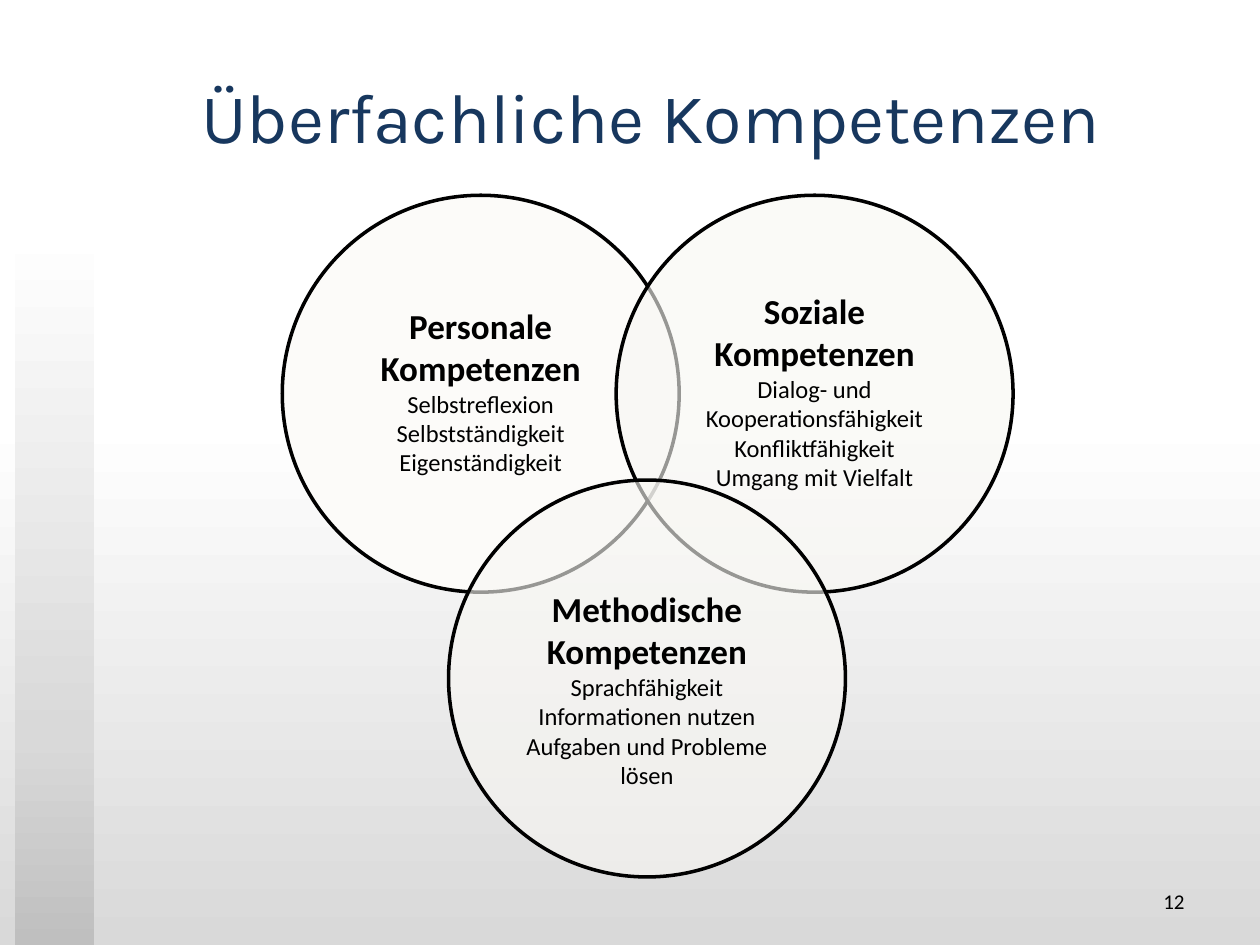
from dataclasses import dataclass

from lxml import etree
from pptx import Presentation
from pptx.dml.color import RGBColor
from pptx.enum.shapes import MSO_SHAPE
from pptx.enum.text import MSO_ANCHOR, PP_ALIGN
from pptx.oxml import parse_xml
from pptx.oxml.ns import nsdecls, qn
from pptx.slide import Slide
from pptx.text.text import TextFrame
from pptx.util import Inches, Pt


@dataclass(frozen=True)
class Theme:
    title_font: str = "Karla"
    body_font: str = "Calibri"
    title_size: int = 40
    heading_size: int = 20
    skill_size: int = 14
    number_size: int = 12
    title_color: str = "17375E"
    ink: str = "000000"
    personal_fill: str = "FCFBF9"
    overlap_fill: str = "F8F7F3"
    overlap_alpha: int = 61
    outline: int = 2
    page_stops: tuple = ((0, "FFFFFF"), (44, "FFFFFF"), (100, "D9D9D9"))
    band_stops: tuple = ((24, "FFFFFF"), (78, "D9D9D9"), (100, "BFBFBF"))


@dataclass(frozen=True)
class Competence:
    left: float
    top: float
    headings: tuple[str, ...]
    skills: tuple[str, ...]
    fill: str
    alpha: int = 100
    inset_top: float = 0
    inset_bottom: float = 0.05


THEME = Theme()
DIAMETER = 3.15
UPPER_ROW = 1.55

COMPETENCES = (
    Competence(2.24, UPPER_ROW, ("Personale Kompetenzen",),
               ("Selbstreflexion", "Selbstständigkeit", "Eigenständigkeit"),
               THEME.personal_fill),
    Competence(4.89, UPPER_ROW, ("Soziale Kompetenzen",),
               ("Dialog- und Kooperationsfähigkeit", "Konfliktfähigkeit",
                "Umgang mit Vielfalt"),
               THEME.overlap_fill, THEME.overlap_alpha),
    Competence(3.56, 3.81, ("Methodische", "Kompetenzen"),
               ("Sprachfähigkeit", "Informationen nutzen",
                "Aufgaben und Probleme lösen"),
               THEME.overlap_fill, THEME.overlap_alpha, 0.16, 0),
)


def apply_gradient(owner: etree.ElementBase, stops: tuple) -> None:
    stop_xml = "".join(
        f'<a:gs pos="{position * 1000}"><a:srgbClr val="{color}"/></a:gs>'
        for position, color in stops
    )
    gradient = parse_xml(
        f'<a:gradFill {nsdecls("a")} rotWithShape="1"><a:gsLst>{stop_xml}</a:gsLst>'
        '<a:lin ang="5400000" scaled="0"/></a:gradFill>'
    )
    owner.replace(owner.find(qn("a:solidFill")), gradient)


def write_line(frame: TextFrame, index: int, text: str, size: int,
               align: PP_ALIGN = PP_ALIGN.CENTER, font: str = THEME.body_font,
               color: str = THEME.ink, bold: bool = False) -> None:
    paragraph = frame.paragraphs[0] if index == 0 else frame.add_paragraph()
    paragraph.alignment = align
    run = paragraph.add_run()
    run.text = text
    run.font.name = font
    run.font.size = Pt(size)
    run.font.bold = bold
    run.font.color.rgb = RGBColor.from_string(color)


def add_label(slide: Slide, left: float, top: float, width: float,
              height: float) -> TextFrame:
    label = slide.shapes.add_textbox(
        Inches(left), Inches(top), Inches(width), Inches(height))
    frame = label.text_frame
    frame.word_wrap = True
    frame.vertical_anchor = MSO_ANCHOR.MIDDLE
    return frame


def add_backdrop(slide: Slide) -> None:
    slide.background.fill.solid()
    slide.background.fill.fore_color.rgb = RGBColor.from_string("FFFFFF")
    apply_gradient(slide.element.find(".//" + qn("p:bgPr")), THEME.page_stops)

    band = slide.shapes.add_shape(
        MSO_SHAPE.RECTANGLE, Inches(0.12), Inches(0), Inches(0.63), Inches(7.5))
    band.shadow.inherit = False
    band.line.fill.background()
    band.fill.solid()
    apply_gradient(band.element.spPr, THEME.band_stops)


def add_competence(slide: Slide, competence: Competence) -> None:
    circle = slide.shapes.add_shape(
        MSO_SHAPE.OVAL, Inches(competence.left), Inches(competence.top),
        Inches(DIAMETER), Inches(DIAMETER))
    circle.shadow.inherit = False
    circle.fill.solid()
    circle.fill.fore_color.rgb = RGBColor.from_string(competence.fill)
    if competence.alpha < 100:
        fill_color = circle.element.spPr.find(qn("a:solidFill"))[0]
        etree.SubElement(fill_color, qn("a:alpha"), val=str(competence.alpha * 1000))
    circle.line.color.rgb = RGBColor.from_string(THEME.ink)
    circle.line.width = Pt(THEME.outline)

    frame = circle.text_frame
    frame.word_wrap = True
    frame.vertical_anchor = MSO_ANCHOR.MIDDLE
    frame.margin_left = frame.margin_right = Inches(0.1)
    frame.margin_top = Inches(competence.inset_top)
    frame.margin_bottom = Inches(competence.inset_bottom)
    heading_count = len(competence.headings)
    for index, text in enumerate(competence.headings + competence.skills):
        is_heading = index < heading_count
        size = THEME.heading_size if is_heading else THEME.skill_size
        write_line(frame, index, text, size, bold=is_heading)


def main() -> None:
    presentation = Presentation()
    presentation.slide_width = Inches(10)
    presentation.slide_height = Inches(7.5)
    slide = presentation.slides.add_slide(presentation.slide_layouts[6])

    add_backdrop(slide)
    title = add_label(slide, 0.83, 0.45, 8.67, 0.93)
    write_line(title, 0, "Überfachliche Kompetenzen", THEME.title_size,
               font=THEME.title_font, color=THEME.title_color)
    page_number = add_label(slide, 7.17, 6.95, 2.33, 0.4)
    write_line(page_number, 0, "12", THEME.number_size, PP_ALIGN.RIGHT)
    for competence in COMPETENCES:
        add_competence(slide, competence)

    presentation.save("out.pptx")


if __name__ == "__main__":
    main()
